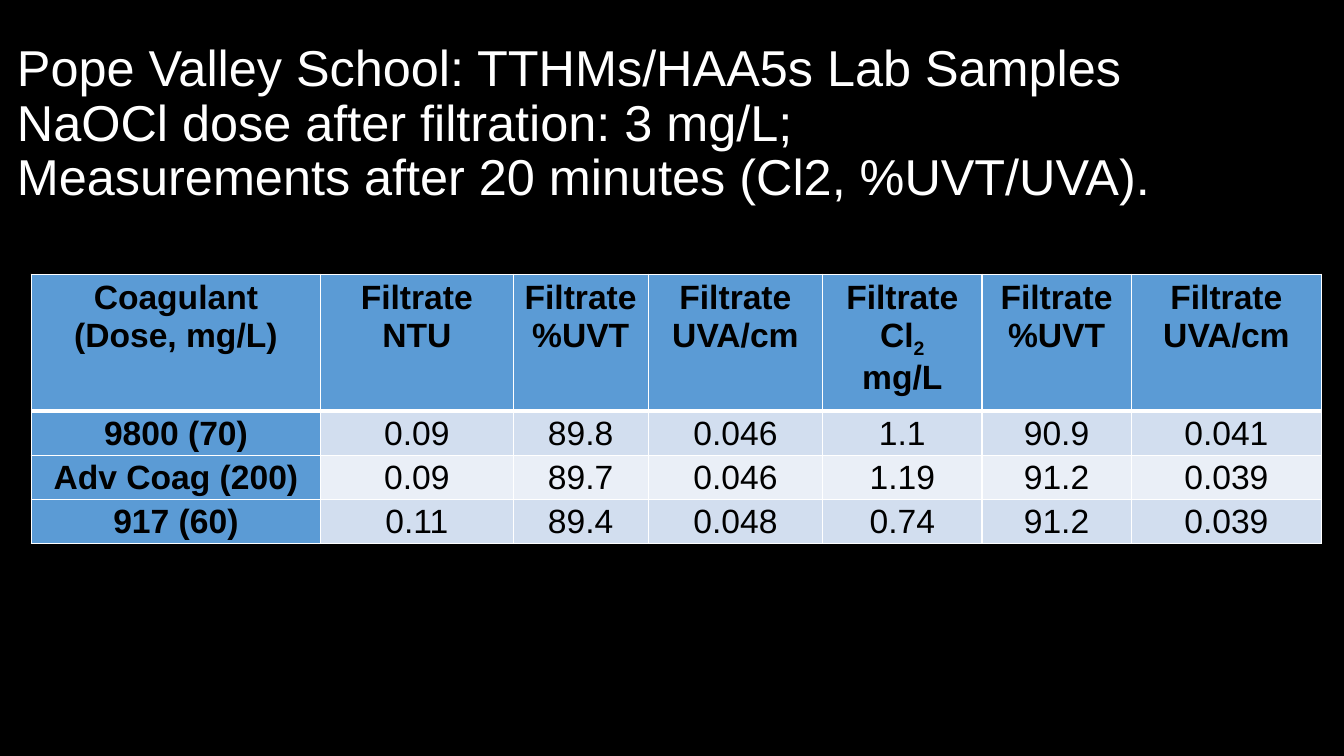
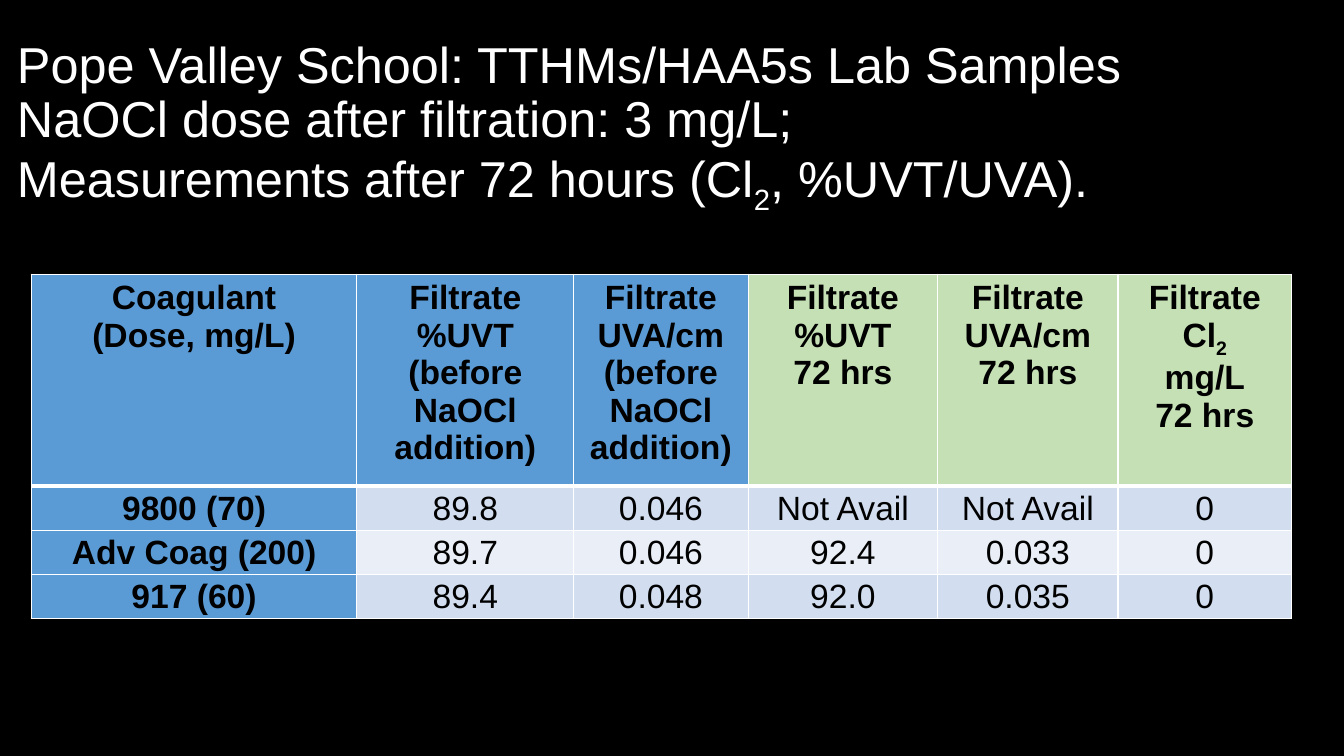
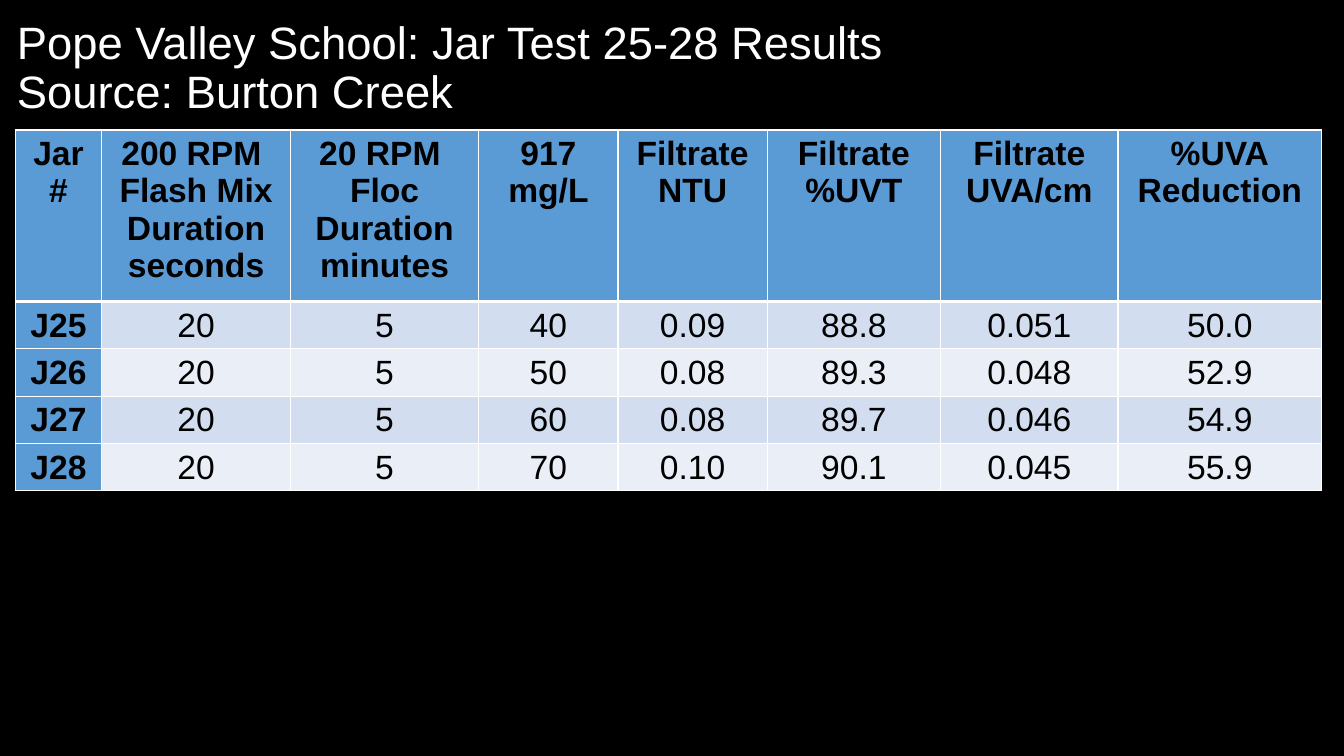
from lxml.etree import SubElement
from pptx import Presentation
from pptx.dml.color import RGBColor
from pptx.enum.text import MSO_ANCHOR, PP_ALIGN
from pptx.oxml.ns import qn
from pptx.util import Inches, Pt

COLORS = {
    "background": "000000",
    "title": "FFFFFF",
    "border": "FFFFFF",
    "cell_text": "000000",
    "heading": "5B9BD5",
    "late_heading": "C5E0B4",
    "odd_row": "D2DEEF",
    "even_row": "EAEFF7",
}
FONT = "Arial"
CELL_SIZE = 24
HEADING_MARGINS = (0.1, 0.05, 0.1, 0.05)
BODY_MARGINS = (0.01, 0.01, 0.01, 0)


def color(name):
    return RGBColor.from_string(COLORS[name])


class Deck:
    def __init__(self):
        self.presentation = Presentation()
        self.presentation.slide_width = Inches(13.33)
        self.presentation.slide_height = Inches(7.5)
        self.slide = None

    def add_slide(self):
        self.slide = self.presentation.slides.add_slide(self.presentation.slide_layouts[6])
        background = self.slide.background.fill
        background.solid()
        background.fore_color.rgb = color("background")

    def text_line(self, paragraph, line, size, color_name, bold=False):
        """Add a line to the paragraph; text between tildes becomes subscript."""
        for index, piece in enumerate(line.split("~")):
            if not piece:
                continue
            run = paragraph.add_run()
            run.text = piece
            run.font.name = FONT
            run.font.size = Pt(size)
            run.font.bold = bold
            run.font.color.rgb = color(color_name)
            if index % 2:
                run.font._element.set("baseline", "-25000")

    def title(self, lines, top=0.16, height=2.16, size=36):
        box = self.slide.shapes.add_textbox(Inches(0.07), Inches(top), Inches(13.03), Inches(height))
        frame = box.text_frame
        frame.word_wrap = True
        frame.vertical_anchor = MSO_ANCHOR.MIDDLE
        paragraph = frame.paragraphs[0]
        paragraph.line_spacing = 0.9
        for index, line in enumerate(lines):
            if index:
                paragraph.add_line_break()
            self.text_line(paragraph, line, size, "title")

    def borders(self, cell, top=1, bottom=1):
        properties = cell._tc.get_or_add_tcPr()
        for side, width in (("L", 1), ("R", 1), ("T", top), ("B", bottom)):
            line = SubElement(properties, qn(f"a:ln{side}"), w=str(Pt(width)))
            fill = SubElement(line, qn("a:solidFill"))
            SubElement(fill, qn("a:srgbClr"), val=COLORS["border"])

    def cell(self, cell, lines, fill, margins, bold, anchor):
        cell.fill.solid()
        cell.fill.fore_color.rgb = color(fill)
        cell.margin_left, cell.margin_top, cell.margin_right, cell.margin_bottom = map(Inches, margins)
        cell.vertical_anchor = anchor
        frame = cell.text_frame
        for index, line in enumerate(lines):
            paragraph = frame.add_paragraph() if index else frame.paragraphs[0]
            paragraph.alignment = PP_ALIGN.CENTER
            self.text_line(paragraph, line, CELL_SIZE, "cell_text", bold)

    def table(self, left, top, widths, headings, rows, heading_height, row_height=0.44, late_columns=()):
        """Draw the results; late_columns are the ones measured at the end."""
        height = heading_height + row_height * len(rows)
        table = self.slide.shapes.add_table(
            len(rows) + 1, len(widths), Inches(left), Inches(top), Inches(sum(widths)), Inches(height)
        ).table
        for column, width in zip(table.columns, widths):
            column.width = Inches(width)
        for index, row in enumerate(table.rows):
            row.height = Inches(row_height if index else heading_height)
        for index, heading in enumerate(headings):
            cell = table.cell(0, index)
            self.borders(cell, bottom=3)
            fill = "late_heading" if index in late_columns else "heading"
            self.cell(cell, heading.split("\n"), fill, HEADING_MARGINS, True, MSO_ANCHOR.TOP)
        for row_index, values in enumerate(rows, start=1):
            band = "odd_row" if row_index % 2 else "even_row"
            for index, value in enumerate(values):
                cell = table.cell(row_index, index)
                self.borders(cell, top=3 if row_index == 1 else 1)
                is_label = index == 0
                self.cell(cell, [value], "heading" if is_label else band,
                          BODY_MARGINS, is_label, MSO_ANCHOR.MIDDLE)


def main():
    deck = Deck()
    lab_title = ["Pope Valley School: TTHMs/HAA5s Lab Samples", "NaOCl dose after filtration: 3 mg/L;"]
    coagulant, ntu = "Coagulant\n(Dose, mg/L)", "Filtrate\nNTU"
    uvt, uva, chlorine = "Filtrate\n%UVT", "Filtrate\nUVA/cm", "Filtrate\nCl~2~\nmg/L"

    deck.add_slide()
    deck.title(lab_title + ["Measurements after 20 minutes (Cl2, %UVT/UVA)."])
    deck.table(
        0.31, 2.72, [2.87, 1.91, 1.34, 1.73, 1.58, 1.48, 1.89],
        [coagulant, ntu, uvt, uva, chlorine, uvt, uva],
        [
            ["9800 (70)", "0.09", "89.8", "0.046", "1.1", "90.9", "0.041"],
            ["Adv Coag (200)", "0.09", "89.7", "0.046", "1.19", "91.2", "0.039"],
            ["917 (60)", "0.11", "89.4", "0.048", "0.74", "91.2", "0.039"],
        ],
        heading_height=1.27,
    )

    deck.add_slide()
    deck.title(lab_title + ["Measurements after 72 hours (Cl~2~, %UVT/UVA)."])
    deck.table(
        0.31, 2.72, [3.23, 2.15, 1.73, 1.88, 1.79, 1.72],
        [coagulant, uvt + "\n(before NaOCl\naddition)", uva + "\n(before NaOCl addition)"]
        + [measure + "\n72 hrs" for measure in (uvt, uva, chlorine)],
        [
            ["9800 (70)", "89.8", "0.046", "Not Avail", "Not Avail", "0"],
            ["Adv Coag (200)", "89.7", "0.046", "92.4", "0.033", "0"],
            ["917 (60)", "89.4", "0.048", "92.0", "0.035", "0"],
        ],
        heading_height=1.95,
        late_columns=(3, 4, 5),
    )

    deck.add_slide()
    deck.title(["Pope Valley School: Jar Test 25-28 Results", "Source: Burton Creek"],
               top=0.12, height=1.14, size=32.4)
    deck.table(
        0.15, 1.29, [0.86, 1.87, 1.87, 1.38, 1.48, 1.72, 1.76, 2.02],
        ["Jar\n#", "200 RPM \nFlash Mix\nDuration\nseconds", "20 RPM \nFloc\nDuration\nminutes",
         "917\nmg/L", ntu, uvt, uva, "%UVA\nReduction"],
        [
            ["J25", "20", "5", "40", "0.09", "88.8", "0.051", "50.0"],
            ["J26", "20", "5", "50", "0.08", "89.3", "0.048", "52.9"],
            ["J27", "20", "5", "60", "0.08", "89.7", "0.046", "54.9"],
            ["J28", "20", "5", "70", "0.10", "90.1", "0.045", "55.9"],
        ],
        heading_height=1.59,
        row_height=0.47,
    )

    deck.presentation.save("out.pptx")


if __name__ == "__main__":
    main()
